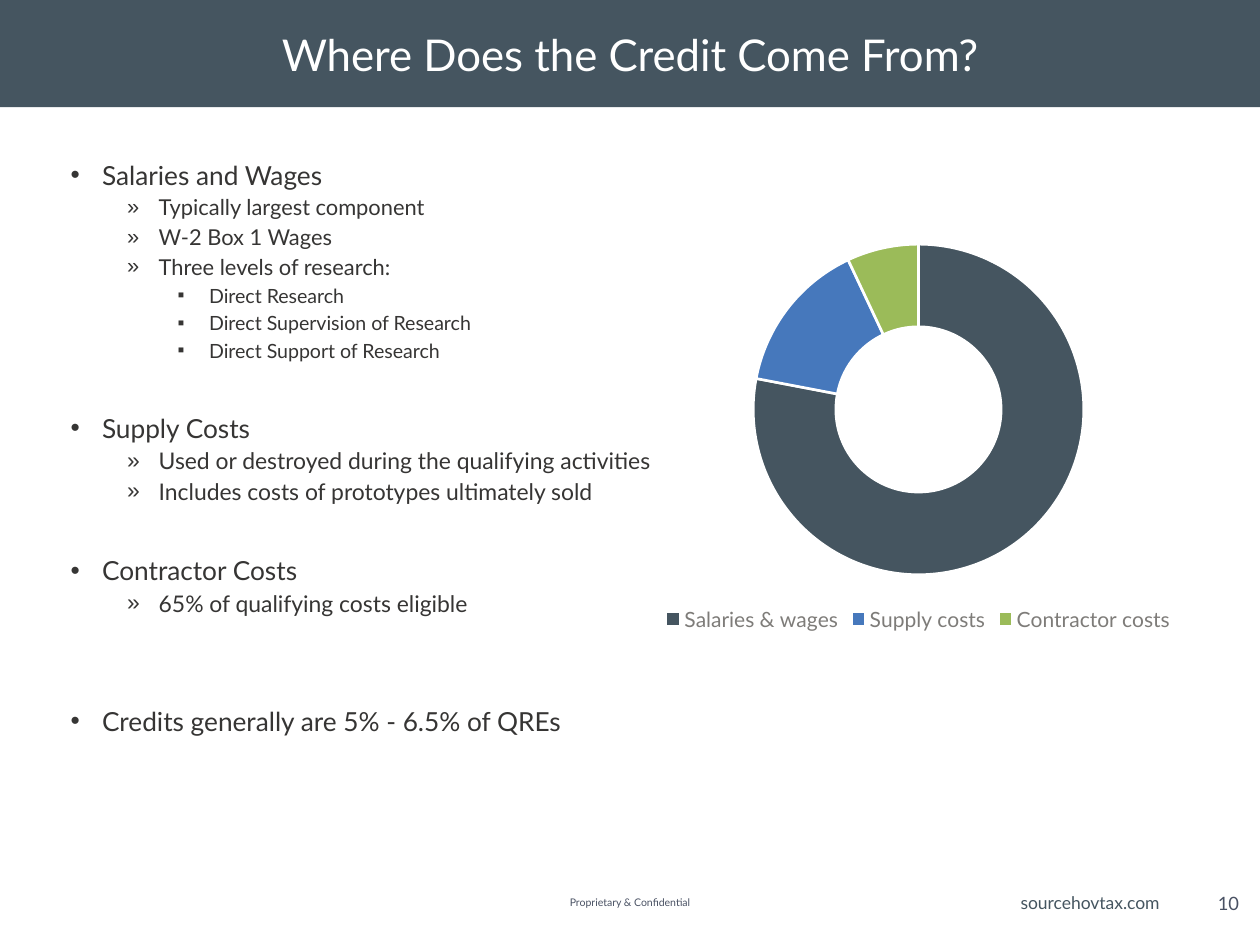
from lxml.etree import SubElement
from pptx import Presentation
from pptx.chart.data import CategoryChartData
from pptx.dml.color import RGBColor
from pptx.enum.chart import XL_CHART_TYPE, XL_LEGEND_POSITION
from pptx.enum.shapes import MSO_SHAPE
from pptx.enum.text import MSO_ANCHOR, MSO_AUTO_SIZE, PP_ALIGN
from pptx.oxml.ns import qn
from pptx.util import Inches, Pt

SLATE = RGBColor(0x45, 0x55, 0x60)
BLUE = RGBColor(0x46, 0x78, 0xBC)
GREEN = RGBColor(0x9B, 0xBB, 0x59)
INK = RGBColor(0x36, 0x35, 0x34)
FOOTER_INK = RGBColor(0x49, 0x51, 0x63)
LEGEND_INK = RGBColor(0x7E, 0x7C, 0x79)
WHITE = RGBColor(0xFF, 0xFF, 0xFF)
FONT = "Lato"

LEVELS = [("•", 0.25), ("»", 0.7), ("▪", 1.1)]
HANGING = 0.25
OUTLINE = [
    (0, "Salaries and Wages", 15, 0),
    (1, "Typically largest component", 12.5, 5),
    (1, "W-2 Box 1 Wages", 12.5, 5),
    (1, "Three levels of research:", 12.5, 5),
    (2, "Direct Research", 11.2, 5),
    (2, "Direct Supervision of Research", 11.2, 5),
    (2, "Direct Support of Research", 11.2, 5),
    (0, "Supply Costs", 15, 32),
    (1, "Used or destroyed during the qualifying activities", 13.1, 5),
    (1, "Includes costs of prototypes ultimately sold", 13.1, 5),
    (0, "Contractor Costs", 15, 32),
    (1, "65% of qualifying costs eligible", 13.1, 5),
    (0, "Credits generally are 5% - 6.5% of QREs", 15, 54),
]
COSTS = [("Salaries & wages", 78, SLATE), ("Supply costs", 15, BLUE), ("Contractor costs", 7, GREEN)]


def inches(*lengths):
    """Convert a box given in inches to slide units."""
    return [Inches(length) for length in lengths]


def place(shape, box):
    """Move a shape into a box."""
    shape.left, shape.top, shape.width, shape.height = box


def style(font, size, color):
    """Apply the slide's typeface with a size and colour."""
    font.name, font.size = FONT, Pt(size)
    font.color.rgb = color


def add_header(slide, box, text):
    """Place the title over a band that fills the box."""
    left, top, width, height = box
    band = slide.shapes.add_shape(MSO_SHAPE.RECTANGLE, *box)
    band.shadow.inherit = False
    band.fill.solid()
    band.fill.fore_color.rgb = SLATE
    band.line.fill.background()
    title = slide.shapes.title
    title.element.addprevious(band.element)
    margin = int(width * 0.05)
    place(title, (left + margin, top, width - 2 * margin, height))
    frame = title.text_frame
    frame.text = text
    frame.auto_size = MSO_AUTO_SIZE.NONE
    frame.vertical_anchor = MSO_ANCHOR.MIDDLE
    frame.paragraphs[0].alignment = PP_ALIGN.CENTER
    style(frame.paragraphs[0].font, 25, WHITE)


def add_bullet(paragraph, level):
    """Give a paragraph the bullet and hanging indent of its level."""
    mark, indent = LEVELS[level]
    paragraph.level = level
    properties = paragraph._p.get_or_add_pPr()
    properties.set("marL", str(Inches(indent)))
    properties.set("indent", str(-Inches(HANGING)))
    SubElement(properties, qn("a:buFont")).set("typeface", "Arial")
    SubElement(properties, qn("a:buChar")).set("char", mark)


def add_outline(slide, box):
    """Fill the body placeholder with the cost outline."""
    body = slide.placeholders[1]
    place(body, box)
    frame = body.text_frame
    frame.auto_size = MSO_AUTO_SIZE.NONE
    for index, (level, text, size, space) in enumerate(OUTLINE):
        paragraph = frame.add_paragraph() if index else frame.paragraphs[0]
        paragraph.text = text
        add_bullet(paragraph, level)
        paragraph.line_spacing = 0.8
        paragraph.space_before = Pt(space)
        style(paragraph.font, size, INK)


def add_cost_chart(slide, box):
    """Draw the doughnut of cost shares with a legend below."""
    data = CategoryChartData()
    data.categories = [name for name, _, _ in COSTS]
    data.add_series("Series 1", [share for _, share, _ in COSTS])
    chart = slide.shapes.add_chart(XL_CHART_TYPE.DOUGHNUT, *box, data).chart
    chart.has_title = False
    style(chart.font, 10, INK)
    chart.has_legend = True
    chart.legend.position = XL_LEGEND_POSITION.BOTTOM
    chart.legend.include_in_layout = False
    style(chart.legend.font, 12, LEGEND_INK)
    plot = chart.plots[0]
    plot.vary_by_categories = True
    plot._element.find(qn("c:holeSize")).set("val", "75")
    for index, (_, _, color) in enumerate(COSTS):
        slice_format = plot.series[0].points[index].format
        slice_format.fill.solid()
        slice_format.fill.fore_color.rgb = color
        slice_format.line.color.rgb = WHITE
        slice_format.line.width = Pt(1.5)


def add_label(slide, box, text, size, color, alignment):
    """Write one unpadded footer label."""
    frame = slide.shapes.add_textbox(*box).text_frame
    frame.margin_left = frame.margin_right = frame.margin_top = frame.margin_bottom = 0
    frame.word_wrap = False
    frame.vertical_anchor = MSO_ANCHOR.MIDDLE
    paragraph = frame.paragraphs[0]
    paragraph.text = text
    paragraph.alignment = alignment
    style(paragraph.font, size, color)


def add_footer(slide, box):
    """Line up the notice, site and page number in the footer box."""
    left, top, width, height = box
    labels = [
        (0.44, 0.12, "Proprietary & Confidential", 6, FOOTER_INK, PP_ALIGN.CENTER),
        (0.81, 0.12, "sourcehovtax.com", 10, SLATE, PP_ALIGN.LEFT),
        (0.96, 0.03, "10", 10.5, FOOTER_INK, PP_ALIGN.CENTER),
    ]
    for start, share, *label in labels:
        label_box = (left + int(width * start), top, int(width * share), height)
        add_label(slide, label_box, *label)


def main():
    """Build and save the slide."""
    deck = Presentation()
    deck.slide_width, deck.slide_height = inches(10, 7.5)
    slide = deck.slides.add_slide(deck.slide_layouts[1])
    add_header(slide, inches(0, 0, 10, 0.85), "Where Does the Credit Come From?")
    add_outline(slide, inches(0.46, 1.26, 4.9, 4.88))
    add_cost_chart(slide, inches(4.85, 1.8, 4.88, 3.25))
    add_footer(slide, inches(0, 7.03, 10, 0.27))
    deck.save("out.pptx")


if __name__ == "__main__":
    main()
